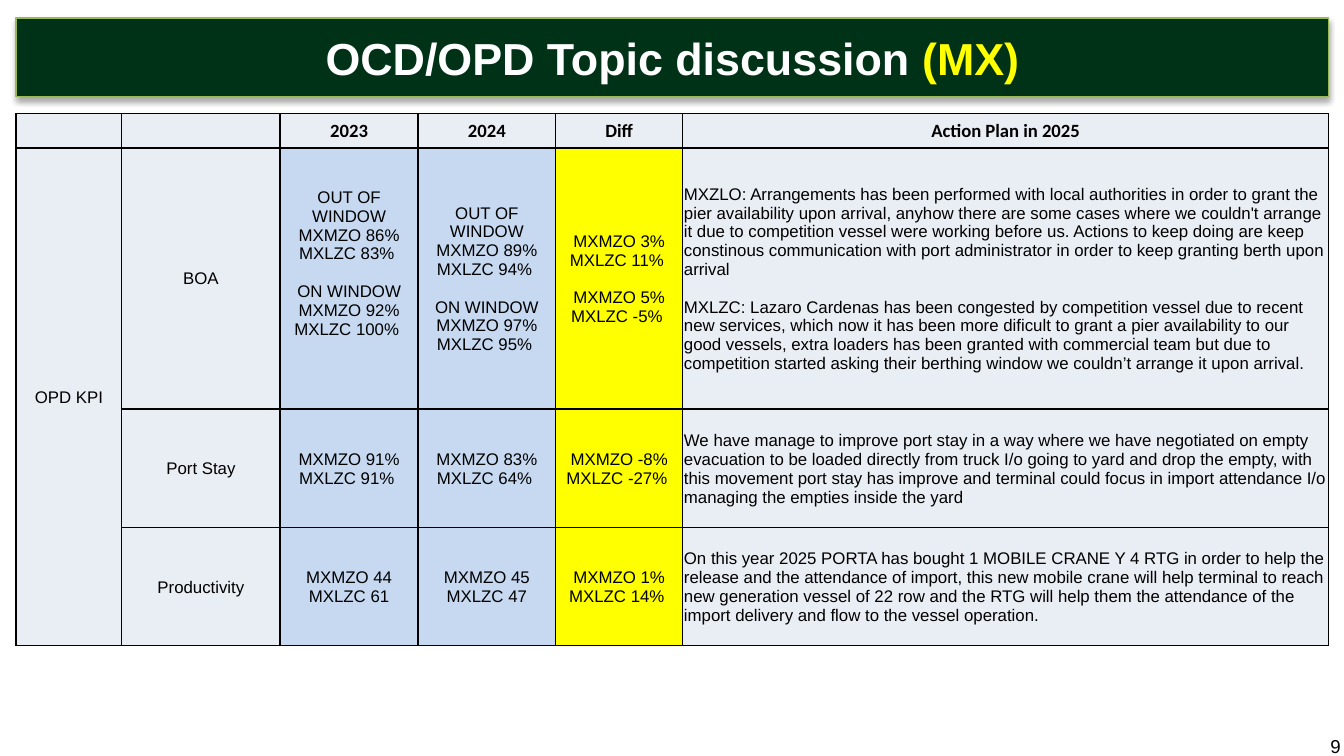
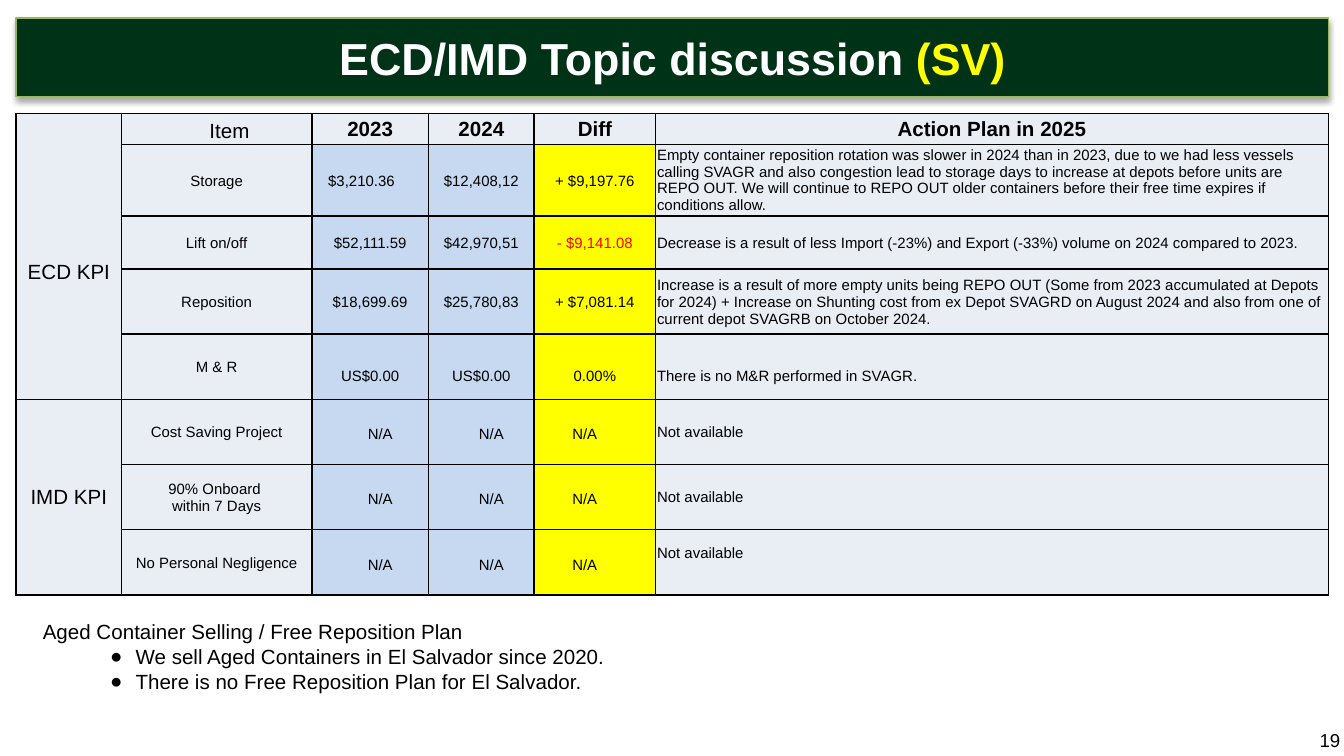
import dataclasses

import lxml.etree
import pptx
import pptx.dml.color
import pptx.enum.shapes
import pptx.enum.text
import pptx.oxml.ns
import pptx.util

ALIGN = pptx.enum.text.PP_ALIGN
MIDDLE = pptx.enum.text.MSO_ANCHOR.MIDDLE
TOP = pptx.enum.text.MSO_ANCHOR.TOP
EMU_PER_PX = 4572  # 200 px to the inch


@dataclasses.dataclass(frozen=True)
class Theme:
    font: str = "Arial"
    header_font: str = "Calibri"
    green: str = "003217"
    green_edge: str = "98B955"
    white: str = "FFFFFF"
    black: str = "000000"
    red: str = "FF0000"
    yellow: str = "FFFF00"
    panel: str = "E9EDF4"
    blue: str = "C6D9F1"
    title_size: int = 24
    note_size: int = 11
    page_size: int = 10


THEME = Theme()
COLUMN_FILLS = [THEME.panel, THEME.panel, THEME.blue, THEME.blue, THEME.yellow, THEME.panel]
SLIDE_SIZE = {"slide_width": 2000, "slide_height": 1125}
TITLE_BOX = (24, 27, 1953, 117)
TABLE_ORIGIN = (24, 169)


class Cell:
    """Cell text with the format values that differ from its column's."""

    def __init__(self, text, **changes):
        self.text = text
        self.changes = changes


# ---- Helpers ----
def px(length):
    return pptx.util.Emu(length * EMU_PER_PX)


def rgb(value):
    return pptx.dml.color.RGBColor.from_string(value)


def assign(target, values):
    for name, value in values.items():
        setattr(target, name, value)


def add_xml(parent, tag, **attributes):
    return lxml.etree.SubElement(parent, pptx.oxml.ns.qn(tag), attributes)


def add_span(para, text, size, color=THEME.black, bold=False, font=THEME.font):
    span = para.add_run()
    span.text = text
    assign(span.font, {"name": font, "size": pptx.util.Pt(size), "bold": bold})
    span.font.color.rgb = rgb(color)


def add_text_box(page, box, **frame_values):
    frame = page.shapes.add_textbox(*map(px, box)).text_frame
    assign(frame, {"word_wrap": True, **frame_values})
    return frame


# ---- Title band ----
def add_title(page, box, topic, country):
    band = page.shapes.add_shape(pptx.enum.shapes.MSO_SHAPE.RECTANGLE, *map(px, box))
    band.fill.solid()
    band.fill.fore_color.rgb = rgb(THEME.green)
    band.line.color.rgb = rgb(THEME.green_edge)
    band.line.width = pptx.util.Pt(0.75)
    band.shadow.inherit = False
    effects = band.element.spPr.find(pptx.oxml.ns.qn("a:effectLst"))
    shadow = add_xml(effects, "a:outerShdw", blurRad=str(pptx.util.Pt(3.1)),
                     dist=str(pptx.util.Pt(1.8)), dir="5400000", rotWithShape="0")
    add_xml(add_xml(shadow, "a:srgbClr", val=THEME.black), "a:alpha", val="35000")
    frame = band.text_frame
    assign(frame, {"margin_left": 0, "margin_right": 0, "margin_top": 0,
                   "margin_bottom": 0, "vertical_anchor": MIDDLE})
    para = frame.paragraphs[0]
    para.alignment = ALIGN.CENTER
    add_span(para, f"{topic} Topic discussion ", THEME.title_size, THEME.white, True)
    add_span(para, f"({country})", THEME.title_size, THEME.yellow, True)


# ---- KPI table ----
def draw_borders(cell):
    properties = cell._tc.get_or_add_tcPr()
    for position, side in enumerate(("a:lnL", "a:lnR", "a:lnT", "a:lnB")):
        line = add_xml(properties, side, w=str(pptx.util.Pt(1)))
        add_xml(add_xml(line, "a:solidFill"), "a:srgbClr", val=THEME.black)
        properties.insert(position, line)


def fill_cell(cell, text, style):
    cell.fill.solid()
    cell.fill.fore_color.rgb = rgb(style["fill"])
    draw_borders(cell)
    assign(cell, {"margin_left": px(style["left"]), "margin_right": px(style["right"]),
                  "margin_top": px(style["top"]), "margin_bottom": px(style["bottom"]),
                  "vertical_anchor": style["anchor"]})
    frame = cell.text_frame
    if not text:
        add_xml(frame.paragraphs[0]._p, "a:endParaRPr", sz=str(style["size"] * 100))
        return
    # A blank line in the text becomes spacing above the next paragraph
    para = None
    for group_index, group in enumerate(text.split("\n\n")):
        for line_index, line in enumerate(group.split("\n")):
            para = frame.add_paragraph() if para else frame.paragraphs[0]
            para.alignment = style["align"]
            if group_index and not line_index:
                para.space_before = pptx.util.Pt(10)
            add_span(para, line, style["size"], style["color"], style["bold"], style["font"])


def cell_style(row, column, size, header):
    style = {"fill": COLUMN_FILLS[column], "align": ALIGN.CENTER, "anchor": MIDDLE,
             "size": size, "color": THEME.black, "bold": False, "font": THEME.font,
             "left": 2, "right": 2, "top": 2, "bottom": 0}
    if row == 0 and column > 0:
        style.update(fill=THEME.panel, bold=True, **header)
    elif column == 5:
        style["align"] = ALIGN.LEFT
    return style


def add_kpi_table(page, origin, widths, heights, rows, groups, size, header):
    """groups maps the first row of a merged KPI cell to its row count."""
    box = (*origin, sum(widths), sum(heights))
    table = page.shapes.add_table(len(rows), len(widths), *map(px, box)).table
    assign(table, {"first_row": False, "horz_banding": False})
    for column, width in zip(table.columns, widths):
        column.width = px(width)
    for row, height in zip(table.rows, heights):
        row.height = px(height)
    for row_index, row in enumerate(rows):
        for column_index, content in enumerate(row):
            style = cell_style(row_index, column_index, size, header)
            if isinstance(content, Cell):
                style.update(content.changes)
                content = content.text
            fill_cell(table.cell(row_index, column_index), content, style)
    for first, count in groups.items():
        table.cell(first, 0).merge(table.cell(first + count - 1, 0))


# ---- Page number and notes ----
def add_page_number(page, box, number):
    frame = add_text_box(page, box, vertical_anchor=MIDDLE)
    add_span(frame.paragraphs[0], str(number), THEME.page_size)


def add_reposition_plan(page, box, heading, points):
    frame = add_text_box(page, box, auto_size=pptx.enum.text.MSO_AUTO_SIZE.SHAPE_TO_FIT_TEXT)
    add_span(frame.paragraphs[0], heading, THEME.note_size)
    for point in points:
        para = frame.add_paragraph()
        para.level = 1
        properties = para._p.get_or_add_pPr()
        properties.set("marL", str(px(138)))
        properties.set("indent", str(px(-38)))
        add_xml(properties, "a:buFont", typeface=THEME.font)
        add_xml(properties, "a:buChar", char="●")
        add_span(para, point, THEME.note_size)


# ---- Content ----
HEADINGS = ["2023", "2024", "Diff", "Action Plan in 2025"]

OPD_ROWS = [
    ["", "", *HEADINGS],
    ["OPD KPI", "BOA",
     Cell("OUT OF WINDOW\nMXMZO 86%\nMXLZC 83% \n\nON WINDOW\nMXMZO 92%\nMXLZC 100% ",
          anchor=TOP, top=60),
     "OUT OF WINDOW\nMXMZO 89%\nMXLZC 94% \n\nON WINDOW\nMXMZO 97%\nMXLZC 95% ",
     "MXMZO 3%\nMXLZC 11% \n\nMXMZO 5%\nMXLZC -5% ",
     "MXZLO: Arrangements has been performed with local authorities in order to grant the "
     "pier availability upon arrival, anyhow there are some cases where we couldn't arrange "
     "it due to competition vessel were working before us. Actions to keep doing are keep "
     "constinous communication with port administrator in order to keep granting berth upon "
     "arrival\n\n"
     "MXLZC: Lazaro Cardenas has been congested by competition vessel due to recent "
     "new services, which now it has been more dificult to grant a pier availability to our "
     "good vessels, extra loaders has been granted with commercial team but due to "
     "competition started asking their berthing window we couldn’t arrange it upon arrival."],
    ["", "Port Stay", "MXMZO 91%\nMXLZC 91% ", "MXMZO 83%\nMXLZC 64% ",
     "MXMZO -8%\nMXLZC -27% ",
     "We have manage to improve port stay in a way where we have negotiated on empty "
     "evacuation to be loaded directly from truck I/o going to yard and drop the empty, with "
     "this movement port stay has improve and terminal could focus in import attendance I/o "
     "managing the empties inside the yard"],
    ["", "Productivity", "MXMZO 44\nMXLZC 61", "MXMZO 45\nMXLZC 47",
     "MXMZO 1%\nMXLZC 14% ",
     "On this year 2025 PORTA has bought 1 MOBILE CRANE Y 4 RTG in order to help the "
     "release and the attendance of import, this new mobile crane will help terminal to reach "
     "new generation vessel of 22 row and the RTG will help them the attendance of the "
     "import delivery and flow to the vessel operation."],
]

NOT_AVAILABLE = [Cell("N/A", left=32, top=8), Cell("N/A", left=32, top=8),
                 Cell("N/A", right=32, top=8)]

ECD_ROWS = [
    [Cell("ECD KPI", size=11, top=48), Cell("Item", bold=False, left=40, top=6), *HEADINGS],
    ["", "Storage", Cell("$3,210.36", right=28), "$12,408,12", "+ $9,197.76",
     Cell("Empty container reposition rotation was slower in 2024 than in 2023, due to we had "
          "less vessels calling SVAGR and also congestion lead to storage days to increase at "
          "depots before units are REPO OUT. We will continue to REPO OUT older containers "
          "before their free time expires if conditions allow.", top=0)],
    ["", "Lift on/off", "$52,111.59", "$42,970,51", Cell("- $9,141.08", color=THEME.red),
     "Decrease is a result of less Import (-23%) and Export (-33%) volume on 2024 compared "
     "to 2023."],
    ["", "Reposition", "$18,699.69", "$25,780,83", "+ $7,081.14",
     "Increase is a result of more empty units being REPO OUT (Some from 2023 accumulated at "
     "Depots for 2024) + Increase on Shunting cost from ex Depot SVAGRD on August 2024 and "
     "also from one of current depot SVAGRB on October 2024."],
    ["", "M & R", *(Cell(text, top=28) for text in (
        "US$0.00", "US$0.00", "0.00%", "There is no M&R performed in SVAGR."))],
    [Cell("IMD KPI", size=11), "Cost Saving Project", *NOT_AVAILABLE,
     Cell("Not available", align=ALIGN.JUSTIFY)],
    ["", "90% Onboard \nwithin 7 Days", *NOT_AVAILABLE,
     Cell("Not available", align=ALIGN.JUSTIFY)],
    ["", "No Personal Negligence", *NOT_AVAILABLE,
     Cell("Not available", align=ALIGN.JUSTIFY, bottom=30)],
]


# ---- Slides ----
def add_page(deck, topic, country):
    page = deck.slides.add_slide(deck.slide_layouts[6])
    add_title(page, TITLE_BOX, topic, country)
    return page


def add_opd_page(deck):
    page = add_page(deck, "OCD/OPD", "MX")
    add_kpi_table(page, TABLE_ORIGIN, [157, 236, 205, 205, 189, 961], [51, 389, 176, 176],
                  OPD_ROWS, {1: 3}, 9, {"size": 10, "font": THEME.header_font})
    add_page_number(page, (1960, 1088, 128, 46), 9)


def add_ecd_page(deck):
    page = add_page(deck, "ECD/IMD", "SV")
    add_kpi_table(page, TABLE_ORIGIN, [157, 283, 174, 157, 181, 1001],
                  [46, 101, 79] + [97] * 5, ECD_ROWS, {0: 5, 5: 3}, 8, {"size": 11})
    add_page_number(page, (1944, 1078, 128, 46), 19)
    add_reposition_plan(page, (44, 912, 1953, 132),
                        "Aged Container Selling / Free Reposition Plan",
                        ["We sell Aged Containers in El Salvador since 2020.",
                         "There is no Free Reposition Plan for El Salvador."])


def main():
    deck = pptx.Presentation()
    assign(deck, {name: px(length) for name, length in SLIDE_SIZE.items()})
    add_opd_page(deck)
    add_ecd_page(deck)
    deck.save("out.pptx")


if __name__ == "__main__":
    main()
